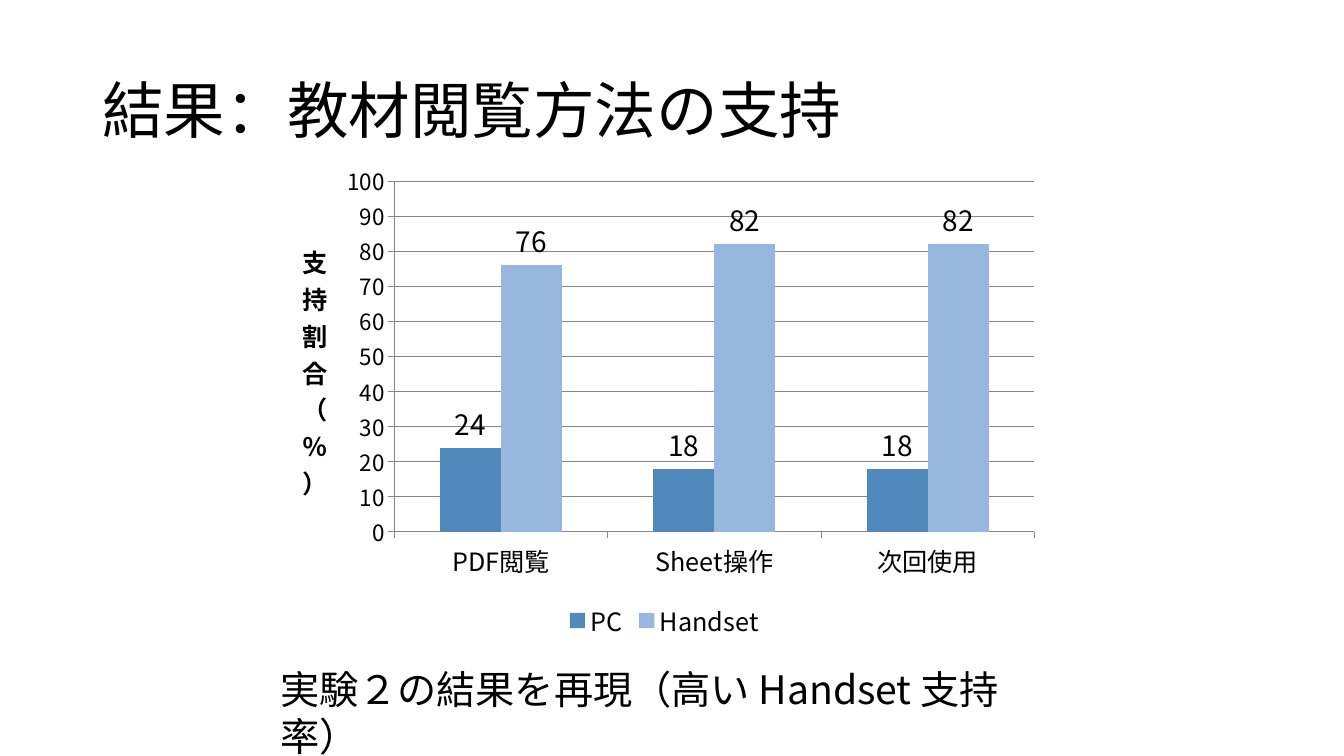
from lxml import etree
from pptx import Presentation
from pptx.chart.data import CategoryChartData
from pptx.dml.color import RGBColor
from pptx.enum.chart import XL_CHART_TYPE, XL_LABEL_POSITION, XL_LEGEND_POSITION, XL_TICK_MARK
from pptx.enum.text import MSO_ANCHOR
from pptx.oxml import parse_xml
from pptx.oxml.ns import nsdecls, qn
from pptx.util import Pt

COLUMNS = XL_CHART_TYPE.COLUMN_CLUSTERED
OUTSIDE_END = XL_LABEL_POSITION.OUTSIDE_END
BOTTOM = XL_LEGEND_POSITION.BOTTOM
TICK_OUT = XL_TICK_MARK.OUTSIDE
MIDDLE, TOP = MSO_ANCHOR.MIDDLE, MSO_ANCHOR.TOP
FONT = "Noto Sans CJK JP"
BLACK, GREY = "000000", "868686"
CATEGORIES = ["PDF閲覧", "Sheet操作", "次回使用"]
SUPPORT = [("PC", [24, 18, 18], "5089BC"), ("Handset", [76, 82, 82], "98B7DF")]
PLOT_AREA = {"x": 0.15, "y": 0.05, "w": 0.83, "h": 0.72}


def color(hex_string):
    """Turn a hex string into a colour."""
    return RGBColor.from_string(hex_string)


def style_font(font, size, bold=False):
    """Apply the slide's typeface, black and a size to a font."""
    font.name, font.size, font.bold = FONT, Pt(size), bold
    font.color.rgb = color(BLACK)
    properties = font._element
    for east_asian in properties.findall(qn("a:ea")):
        properties.remove(east_asian)
    east_asian = etree.Element(qn("a:ea"), typeface=FONT)
    properties.find(qn("a:latin")).addnext(east_asian)


def add_text(slide, box, text, size=28, anchor=TOP, line_spacing=None):
    """Add one wrapped paragraph in a box given in points."""
    frame = slide.shapes.add_textbox(*map(Pt, box)).text_frame
    frame.word_wrap = True
    frame.vertical_anchor = anchor
    paragraph = frame.paragraphs[0]
    paragraph.line_spacing = line_spacing
    run = paragraph.add_run()
    run.text = text
    style_font(run.font, size)


def fix_plot_area(chart):
    """Place the inner plot area at fixed fractions of the chart."""
    plot_area = chart._chartSpace.chart.plotArea
    for layout in plot_area.findall(qn("c:layout")):
        plot_area.remove(layout)
    modes = "".join(f'<c:{side}Mode val="edge"/>' for side in "xy")
    sizes = "".join(f'<c:{side} val="{share}"/>' for side, share in PLOT_AREA.items())
    plot_area.insert(0, parse_xml(
        f'<c:layout {nsdecls("c")}><c:manualLayout><c:layoutTarget val="inner"/>'
        f"{modes}{sizes}</c:manualLayout></c:layout>"))


def style_axes(chart):
    """Format both axes, the gridlines and the stacked axis title."""
    for axis, size in ((chart.category_axis, 18), (chart.value_axis, 16)):
        axis.major_tick_mark = TICK_OUT
        axis.format.line.color.rgb = color(GREY)
        style_font(axis.tick_labels.font, size)
    support_axis = chart.value_axis
    support_axis.minimum_scale, support_axis.maximum_scale = 0, 100
    support_axis.major_unit = 10
    support_axis.major_gridlines.format.line.color.rgb = color(GREY)
    title = support_axis.axis_title.text_frame
    run = title.paragraphs[0].add_run()
    run.text = "支持割合（％）"
    style_font(run.font, 18, bold=True)
    body = title._txBody.find(qn("a:bodyPr"))
    body.set("rot", "0")
    body.set("vert", "wordArtVertRtl")


def add_support_chart(slide, box):
    """Add the chart of support for each way of viewing."""
    data = CategoryChartData()
    data.categories = CATEGORIES
    for device, shares, _ in SUPPORT:
        data.add_series(device, shares)
    chart = slide.shapes.add_chart(COLUMNS, *map(Pt, box), data).chart
    style_font(chart.font, 10)
    chart.has_title = False
    chart.has_legend = True
    chart.legend.position = BOTTOM
    chart.legend.include_in_layout = False
    style_font(chart.legend.font, 18)
    plot = chart.plots[0]
    plot.gap_width, plot.overlap = 150, 0
    plot.vary_by_categories = False
    for series, (_, _, fill) in zip(plot.series, SUPPORT):
        series.format.fill.solid()
        series.format.fill.fore_color.rgb = color(fill)
        labels = series.data_labels
        labels.show_value = True
        labels.position = OUTSIDE_END
        style_font(labels.font, 20)
    style_axes(chart)
    fix_plot_area(chart)


def build_result_slide(presentation):
    """Lay out the title, the chart and the conclusion."""
    slide = presentation.slides.add_slide(presentation.slide_layouts[6])
    add_text(slide, (66, 29, 828, 104), "結果：教材閲覧方法の支持",
             size=44, anchor=MIDDLE, line_spacing=0.9)
    add_support_chart(slide, (199, 112, 551, 348))
    add_text(slide, (193, 472, 574, 41), "実験２の結果を再現（高い Handset 支持率）")


def main():
    """Build and save the presentation."""
    presentation = Presentation()
    presentation.slide_width, presentation.slide_height = Pt(960), Pt(540)
    build_result_slide(presentation)
    presentation.save("out.pptx")


if __name__ == "__main__":
    main()
